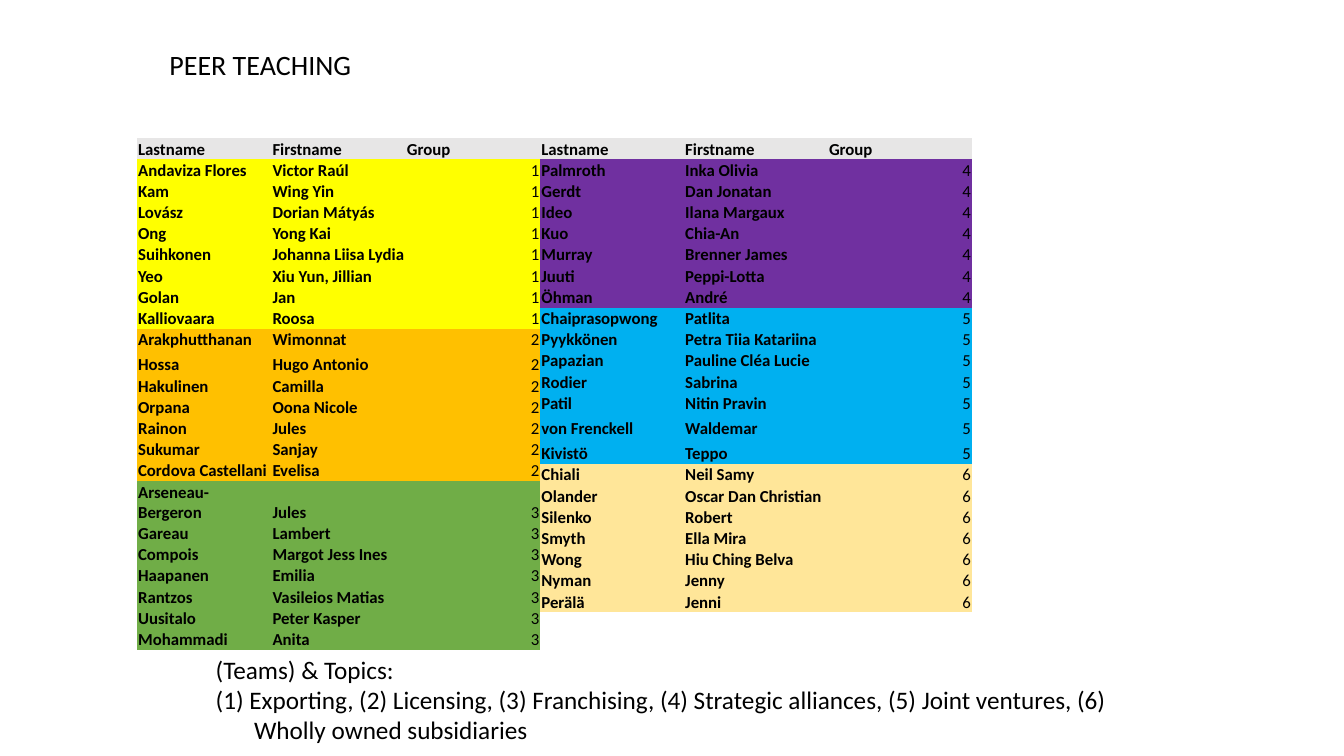
from pptx import Presentation
from pptx import util as u
from pptx.dml.color import RGBColor
from pptx.enum import text
from pptx.oxml import ns
from lxml import etree

BLACK = RGBColor(0x00, 0x00, 0x00)
GREY = RGBColor(0xE7, 0xE6, 0xE6)
YELLOW = RGBColor(0xFF, 0xFF, 0x00)
ORANGE = RGBColor(0xFF, 0xC0, 0x00)
GREEN = RGBColor(0x70, 0xAD, 0x47)
PURPLE = RGBColor(0x70, 0x30, 0xA0)
BLUE = RGBColor(0x00, 0xB0, 0xF0)
CREAM = RGBColor(0xFF, 0xE6, 0x99)
NO_STYLE_NO_GRID = "{2D5ABB26-0587-4C30-8999-92F81FD0307C}"

HEADER = ("Lastname", "Firstname", "Group")
TALL_ROWS = ("Hossa", "von Frenckell", "Kivistö")

# Each group: number, colour, members
LEFT_GROUPS = [
    ("1", YELLOW, [
        ("Andaviza Flores", "Victor Raúl"), ("Kam", "Wing Yin"),
        ("Lovász", "Dorian Mátyás"), ("Ong", "Yong Kai"),
        ("Suihkonen", "Johanna Liisa Lydia"), ("Yeo", "Xiu Yun, Jillian"),
        ("Golan", "Jan"), ("Kalliovaara", "Roosa")]),
    ("2", ORANGE, [
        ("Arakphutthanan", "Wimonnat"), ("Hossa", "Hugo Antonio"),
        ("Hakulinen", "Camilla"), ("Orpana", "Oona Nicole"),
        ("Rainon", "Jules"), ("Sukumar", "Sanjay"),
        ("Cordova Castellani", "Evelisa")]),
    ("3", GREEN, [
        ("Arseneau-Bergeron", "Jules"), ("Gareau", "Lambert"),
        ("Compois", "Margot Jess Ines"), ("Haapanen", "Emilia"),
        ("Rantzos", "Vasileios Matias"), ("Uusitalo", "Peter Kasper"),
        ("Mohammadi", "Anita")]),
]
RIGHT_GROUPS = [
    ("4", PURPLE, [
        ("Palmroth", "Inka Olivia"), ("Gerdt", "Dan Jonatan"),
        ("Ideo", "Ilana Margaux"), ("Kuo", "Chia-An"),
        ("Murray", "Brenner James"), ("Juuti", "Peppi-Lotta"),
        ("Öhman", "André")]),
    ("5", BLUE, [
        ("Chaiprasopwong", "Patlita"), ("Pyykkönen", "Petra Tiia Katariina"),
        ("Papazian", "Pauline Cléa Lucie"), ("Rodier", "Sabrina"),
        ("Patil", "Nitin Pravin"), ("von Frenckell", "Waldemar"),
        ("Kivistö", "Teppo")]),
    ("6", CREAM, [
        ("Chiali", "Neil Samy"), ("Olander", "Oscar Dan Christian"),
        ("Silenko", "Robert"), ("Smyth", "Ella Mira"),
        ("Wong", "Hiu Ching Belva"), ("Nyman", "Jenny"),
        ("Perälä", "Jenni")]),
]
TOPICS = [
    "(Teams) & Topics:",
    "(1) Exporting, (2) Licensing, (3) Franchising, (4) Strategic alliances, "
    "(5) Joint ventures, (6) Wholly owned subsidiaries",
]


def add_run(p, words, size, bold=False):
    r = p.add_run()
    r.text = words
    r.font.name = "Calibri"
    r.font.size = u.Pt(size)
    r.font.bold = bold
    r.font.color.rgb = BLACK


def place(sp, left, top, width, height):
    sp.left, sp.top = u.Inches(left), u.Inches(top)
    sp.width, sp.height = u.Inches(width), u.Inches(height)


prs = Presentation()
prs.slide_width, prs.slide_height = u.Inches(13.33), u.Inches(7.5)
s = prs.slides.add_slide(prs.slide_layouts[1])

# Title
title = s.shapes.title
place(title, 1.58, 0.42, 2.02, 0.44)
tf = title.text_frame
tf.word_wrap = False
tf.auto_size = text.MSO_AUTO_SIZE.SHAPE_TO_FIT_TEXT
tf.vertical_anchor = text.MSO_ANCHOR.TOP
tf.paragraphs[0].alignment = text.PP_ALIGN.LEFT
add_run(tf.paragraphs[0], "PEER TEACHING", 20)

# Student tables, side by side
for left, width, groups in ((1.36, 4, LEFT_GROUPS), (5.36, 4.28, RIGHT_GROUPS)):
    rows = [(HEADER, GREY)]
    for number, colour, members in groups:
        rows += [((last, first, number), colour) for last, first in members]
    heights = [0.25 if names[0] in TALL_ROWS else 0.18 for names, _ in rows]

    frame = s.shapes.add_table(len(rows), 3, u.Inches(left), u.Inches(1.37),
                               u.Inches(width), u.Inches(sum(heights)))
    tbl = frame.table
    tbl.first_row = tbl.horz_banding = False
    tbl._tbl.tblPr.find(ns.qn("a:tableStyleId")).text = NO_STYLE_NO_GRID

    for i, (names, colour) in enumerate(rows):
        tbl.rows[i].height = u.Inches(heights[i])
        for j, words in enumerate(names):
            cell = tbl.cell(i, j)
            cell.fill.solid()
            cell.fill.fore_color.rgb = colour
            cell.vertical_anchor = text.MSO_ANCHOR.BOTTOM
            cell.margin_left = cell.margin_right = cell.margin_top = u.Inches(0.01)
            cell.margin_bottom = 0
            p = cell.text_frame.paragraphs[0]
            is_number = i > 0 and j == 2
            if is_number:
                p.alignment = text.PP_ALIGN.RIGHT
            add_run(p, words, 12, bold=not is_number)

# Topics list with hanging indent and no bullets
topics = s.placeholders[1]
place(topics, 1.36, 6.44, 9.78, 1.01)
tf = topics.text_frame
tf.word_wrap = True
tf.auto_size = text.MSO_AUTO_SIZE.SHAPE_TO_FIT_TEXT
for i, words in enumerate(TOPICS):
    p = tf.add_paragraph() if i else tf.paragraphs[0]
    p.level = 1
    p.space_before = u.Pt(0)
    pPr = p._p.get_or_add_pPr()
    pPr.set("marL", str(u.Inches(1.06)))
    pPr.set("indent", str(u.Inches(-0.38)))
    etree.SubElement(pPr, ns.qn("a:buNone"))
    add_run(p, words, 18)

prs.save("out.pptx")
